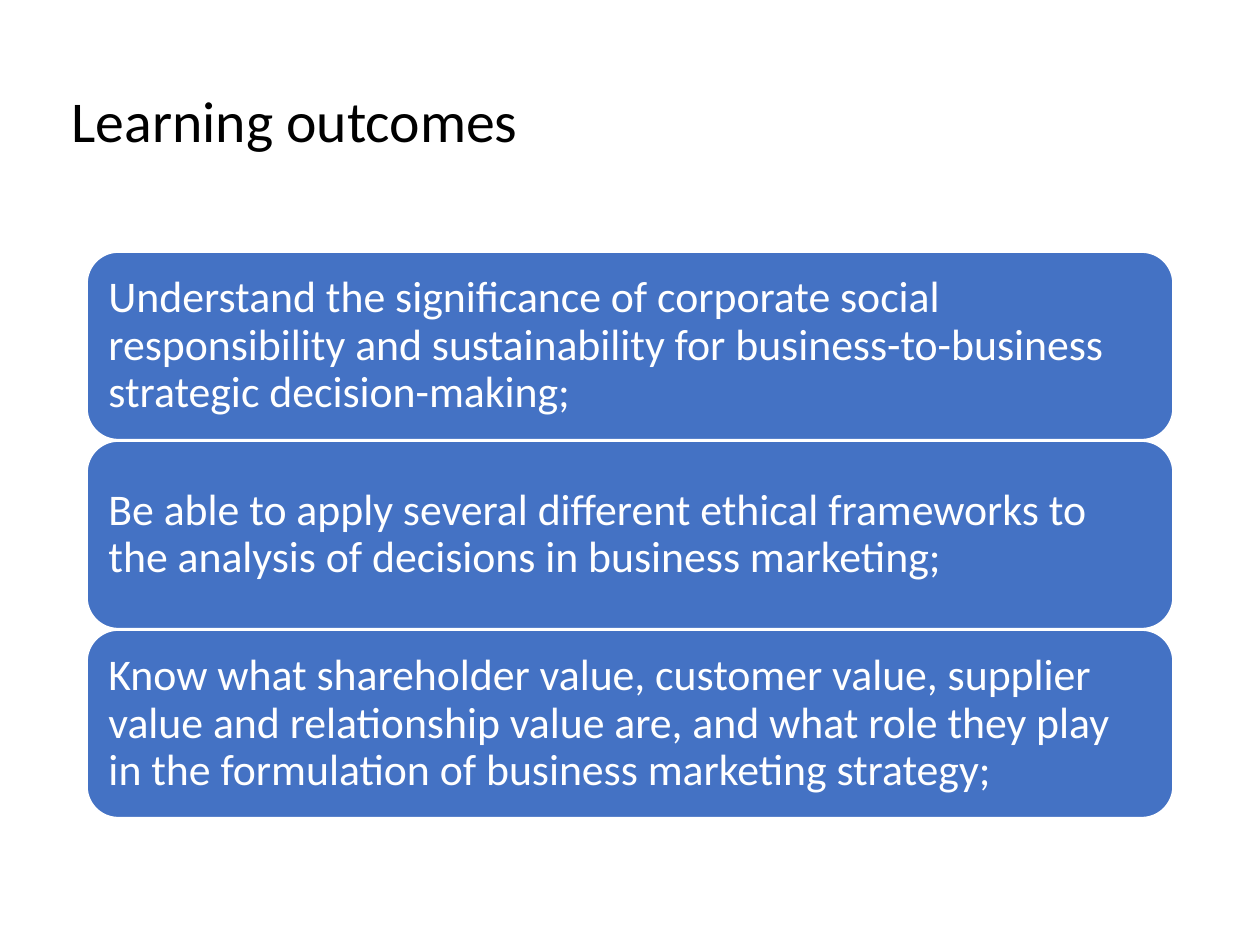
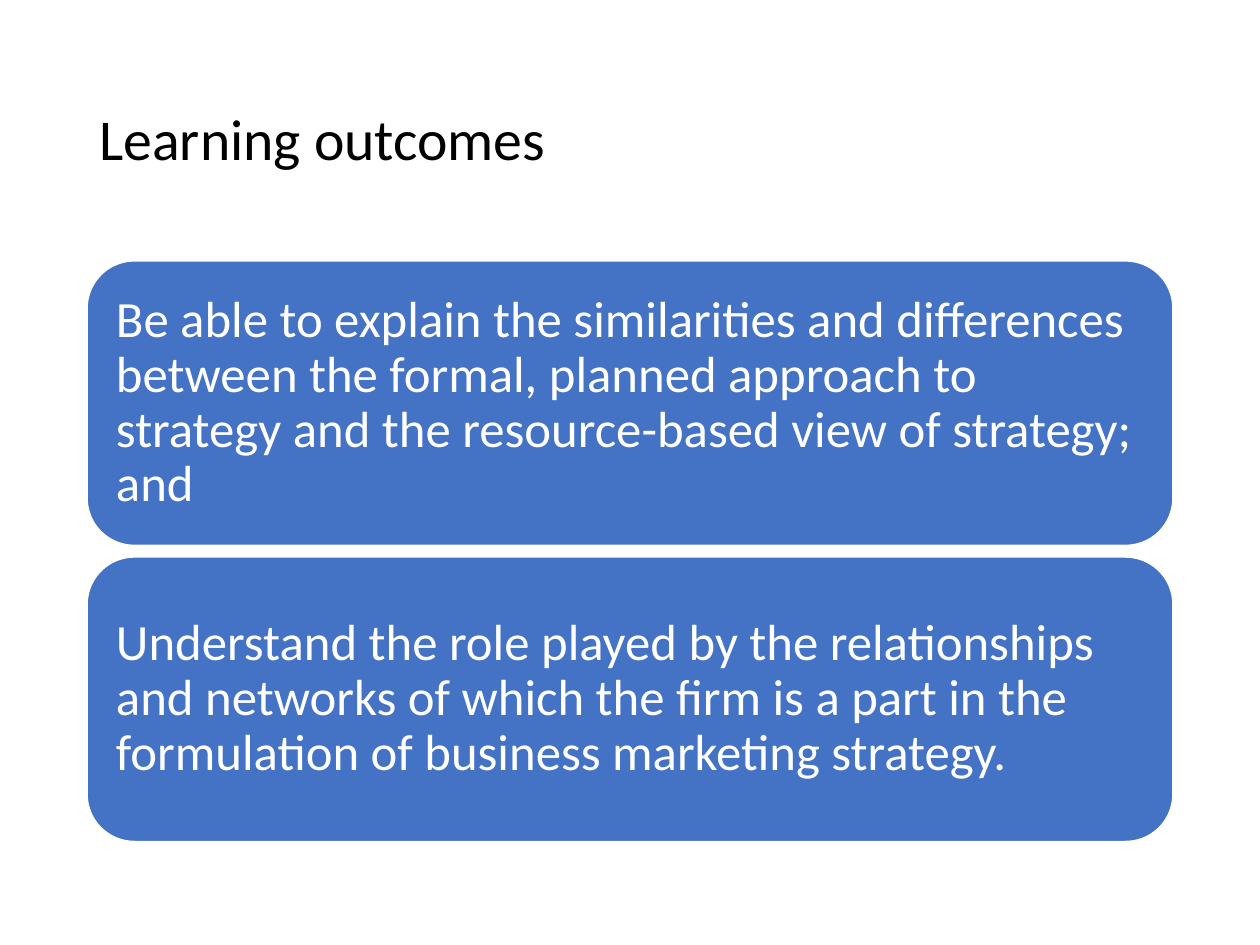
from pptx import Presentation
from pptx import util as u
from pptx.dml.color import RGBColor
from pptx.enum import shapes, text

BLACK = RGBColor(0x00, 0x00, 0x00)
WHITE = RGBColor(0xFF, 0xFF, 0xFF)
BLUE = RGBColor(0x44, 0x72, 0xC4)


class OutcomeDeck:
    """Builds slides of stacked outcome cards in one shared style."""

    font_name = "Calibri"
    title_size = 33
    card_left = 0.69
    card_width = 8.62

    def __init__(self):
        self.presentation = Presentation()
        self.presentation.slide_width = u.Inches(10)
        self.presentation.slide_height = u.Inches(7.5)
        self.slide = None

    def add_slide(self):
        self.slide = self.presentation.slides.add_slide(self.presentation.slide_layouts[6])

    def add_wording(self, shape, wording, size, color):
        frame = shape.text_frame
        frame.word_wrap = True
        frame.vertical_anchor = text.MSO_ANCHOR.MIDDLE
        paragraph = frame.paragraphs[0]
        paragraph.alignment = text.PP_ALIGN.LEFT
        paragraph.line_spacing = 0.9
        run = paragraph.add_run()
        run.text = wording
        run.font.name = self.font_name
        run.font.size = u.Pt(size)
        run.font.color.rgb = color

    def add_title(self, wording, left, top, width, height):
        box = self.slide.shapes.add_textbox(
            u.Inches(left), u.Inches(top), u.Inches(width), u.Inches(height))
        self.add_wording(box, wording, self.title_size, BLACK)

    def add_card(self, wording, top, height, size, inset):
        card = self.slide.shapes.add_shape(
            shapes.MSO_SHAPE.ROUNDED_RECTANGLE,
            u.Inches(self.card_left), u.Inches(top),
            u.Inches(self.card_width), u.Inches(height))
        card.shadow.inherit = False
        card.fill.solid()
        card.fill.fore_color.rgb = BLUE
        card.line.color.rgb = WHITE
        card.line.width = u.Pt(1)
        frame = card.text_frame
        frame.margin_left = frame.margin_right = u.Inches(inset)
        frame.margin_top = frame.margin_bottom = u.Inches(inset)
        self.add_wording(card, wording, size, WHITE)

    def add_cards(self, outcomes, top, height, gap, size, inset):
        for index, outcome in enumerate(outcomes):
            self.add_card(outcome, top + index * (height + gap), height, size, inset)


def main():
    deck = OutcomeDeck()

    deck.add_slide()
    deck.add_title("Learning outcomes", 0.47, 0.44, 9, 1.08)
    deck.add_cards([
        "Understand the significance of corporate social responsibility and "
        "sustainability for business-to-business strategic decision-making;",
        "Be able to apply several different ethical frameworks to the analysis "
        "of decisions in business marketing;",
        "Know what shareholder value, customer value, supplier value and "
        "relationship value are, and what role they play in the formulation of "
        "business marketing strategy;",
    ], top=2, height=1.49, gap=0.01, size=25, inset=0.1)

    deck.add_slide()
    deck.add_title("Learning outcomes", 0.69, 0.4, 8.62, 1.45)
    deck.add_cards([
        "Be able to explain the similarities and differences between the formal, "
        "planned approach to strategy and the resource-based view of strategy; and",
        "Understand the role played by the relationships and networks of which "
        "the firm is a part in the formulation of business marketing strategy.",
    ], top=2.07, height=2.26, gap=0.09, size=29, inset=0.12)

    deck.presentation.save("out.pptx")


if __name__ == "__main__":
    main()
